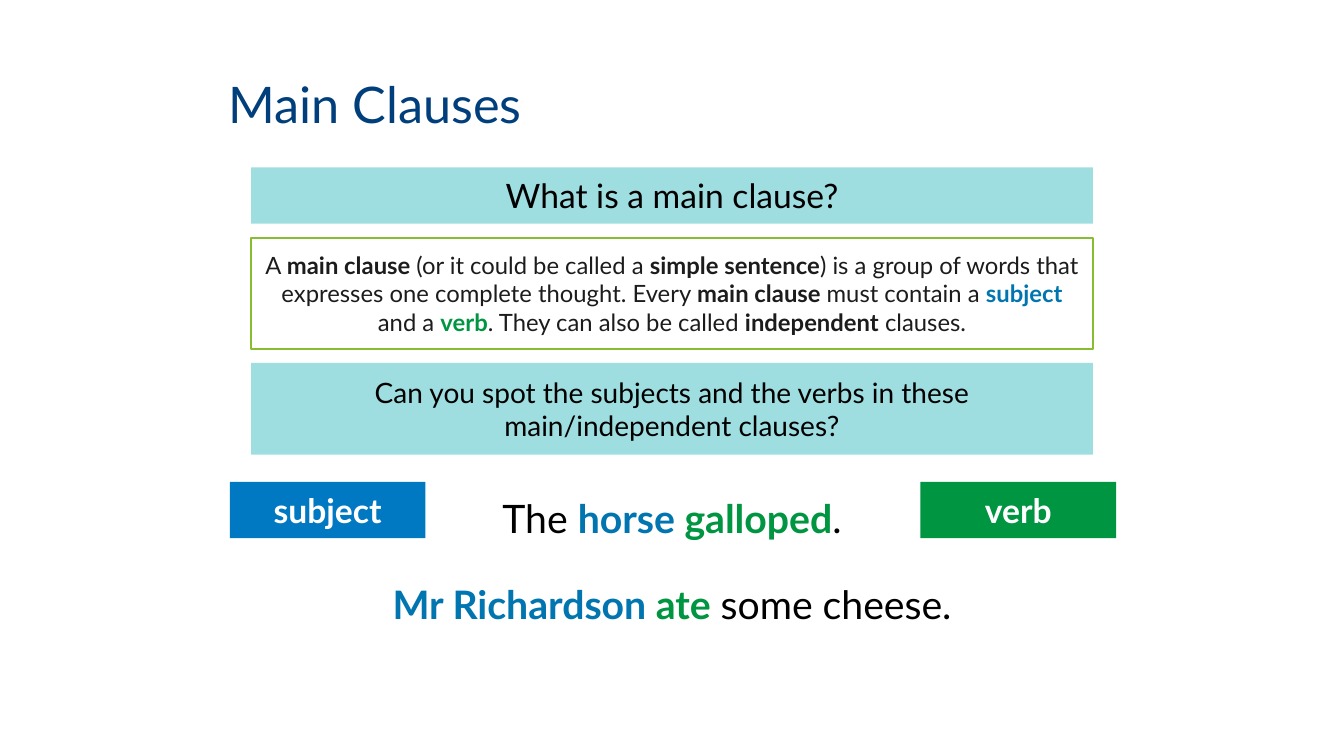
"""Build the Main Clauses grammar slide."""
from lxml.etree import SubElement
from pptx import Presentation
from pptx.dml.color import RGBColor
from pptx.enum.shapes import MSO_SHAPE
from pptx.enum.text import MSO_ANCHOR, MSO_AUTO_SIZE, PP_ALIGN
from pptx.oxml.ns import qn
from pptx.util import Inches, Pt

COLOURS = {
    "title": "013F7C", "banner": "2DB6BC", "border": "87BD31",
    "body": "1C1C1C", "black": "000000", "white": "FFFFFF",
    "subject": "0175B0", "subject_label": "0078C2", "verb": "009541",
}
FONT = "Lato"
LEFT, WIDTH = 2.49, 8.35
LABEL_PADDING = (0, 0.08)
BOX_PADDING = (0.12, 0.12)


def colour(name):
    """Return a named colour."""
    return RGBColor.from_string(COLOURS[name])


def write(frame, phrases, size, base):
    """Write phrases, plain strings or (text, colour) pairs shown in bold."""
    paragraph = frame.paragraphs[0]
    paragraph.font.name = FONT
    paragraph.font.size = Pt(size)
    for phrase in phrases:
        bold = isinstance(phrase, tuple)
        words, tint = phrase if bold else (phrase, base)
        run = paragraph.add_run()
        run.text = words
        run.font.bold = bold
        run.font.color.rgb = colour(tint)
    return paragraph


def add_title(slide, words):
    """Add the slide title."""
    title = slide.shapes.add_textbox(
        Inches(2.17), Inches(0.52), Inches(8.99), Inches(1.09))
    frame = title.text_frame
    frame.word_wrap = True
    frame.vertical_anchor = MSO_ANCHOR.MIDDLE
    write(frame, [words], 36, "title").line_spacing = 0.9


def add_box(slide, top, height, phrases, size, base="black", left=LEFT,
            width=WIDTH, fill=None, opacity=100, border=None,
            padding=BOX_PADDING, anchor=MSO_ANCHOR.TOP):
    """Add a rectangle with centred text."""
    box = slide.shapes.add_shape(
        MSO_SHAPE.RECTANGLE, Inches(left), Inches(top), Inches(width), Inches(height))
    box.shadow.inherit = False
    if fill:
        box.fill.solid()
        box.fill.fore_color.rgb = colour(fill)
    else:
        box.fill.background()
    if opacity < 100:
        tint = box.fill._xPr.find(f".//{qn('a:srgbClr')}")
        SubElement(tint, qn("a:alpha"), val=str(opacity * 1000))
    if border:
        box.line.color.rgb = colour(border)
        box.line.width = Pt(1.5)
    else:
        box.line.fill.background()
    frame = box.text_frame
    frame.word_wrap = True
    frame.auto_size = MSO_AUTO_SIZE.SHAPE_TO_FIT_TEXT
    frame.vertical_anchor = anchor
    frame.margin_left = frame.margin_right = Inches(padding[0])
    frame.margin_top = frame.margin_bottom = Inches(padding[1])
    write(frame, phrases, size, base).alignment = PP_ALIGN.CENTER


def add_banner(slide, top, height, words, size, padding):
    """Add a pale turquoise question banner."""
    add_box(slide, top, height, [words], size, fill="banner", opacity=46,
            padding=padding)


def add_label(slide, left, word, fill):
    """Add a solid label naming a part of the clause."""
    add_box(slide, 4.78, 0.56, [(word, "white")], 24, left=left, width=1.94,
            fill=fill, padding=LABEL_PADDING)


def main():
    """Build and save the slide."""
    deck = Presentation()
    deck.slide_width, deck.slide_height = Inches(13.33), Inches(7.5)
    slide = deck.slides.add_slide(deck.slide_layouts[6])

    add_title(slide, "Main Clauses")
    add_banner(slide, 1.66, 0.56, "What is a main clause?", 24, LABEL_PADDING)
    definition = [
        "A ", ("main clause ", "body"), "(or it could be called a ",
        ("simple sentence", "body"),
        ") is a group of words that expresses one complete thought. Every ",
        ("main clause ", "body"), "must contain a ", ("subject", "subject"),
        " and a ", ("verb", "verb"), ". They can also be called ",
        ("independent", "body"), " clauses.",
    ]
    add_box(slide, 2.36, 1.1, definition, 17, base="body", border="border",
            anchor=MSO_ANCHOR.MIDDLE)
    add_banner(
        slide, 3.6, 0.91,
        "Can you spot the subjects and the verbs in these main/independent clauses?",
        20, BOX_PADDING)

    examples = [
        ["The ", ("horse ", "subject"), ("galloped", "verb"), "."],
        [("Mr Richardson ", "subject"), ("ate", "verb"), " some cheese."],
    ]
    for row, sentence in enumerate(examples):
        add_box(slide, 4.78 + row * 0.86, 0.71, sentence, 28, fill="white")

    add_label(slide, 2.28, "subject", "subject_label")
    add_label(slide, 9.13, "verb", "verb")
    deck.save("out.pptx")


if __name__ == "__main__":
    main()
